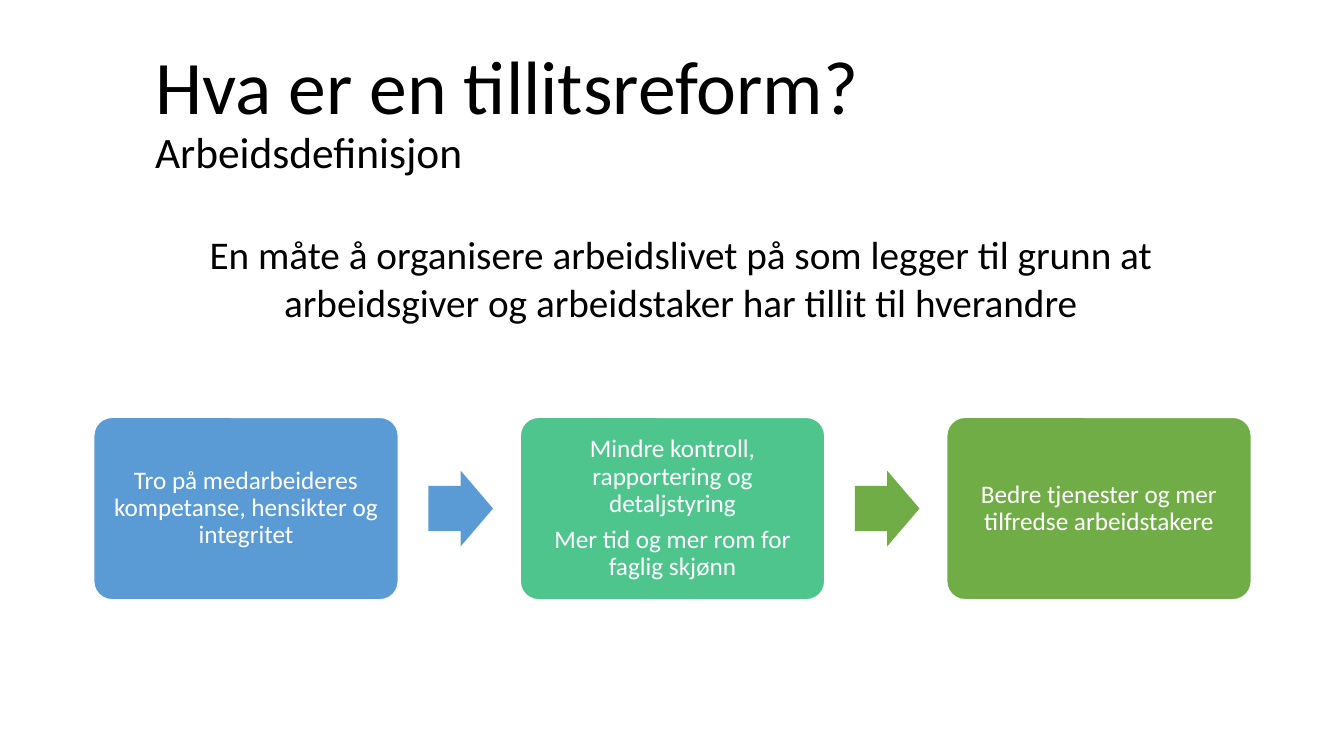
from dataclasses import dataclass
from typing import Any

import pptx
import pptx.dml.color
import pptx.enum.shapes
import pptx.enum.text
import pptx.util

Inches = pptx.util.Inches
Pt = pptx.util.Pt
RGBColor = pptx.dml.color.RGBColor
Shape = pptx.enum.shapes.MSO_SHAPE
Align = pptx.enum.text.PP_ALIGN
Anchor = pptx.enum.text.MSO_ANCHOR
AutoSize = pptx.enum.text.MSO_AUTO_SIZE

BLACK = RGBColor(0x00, 0x00, 0x00)
WHITE = RGBColor(0xFF, 0xFF, 0xFF)
BLUE = RGBColor(0x5B, 0x9B, 0xD5)
TEAL = RGBColor(0x4D, 0xC5, 0x8D)
GREEN = RGBColor(0x70, 0xAD, 0x47)

FONT = "Calibri"

# Flow geometry in inches
STEP_LEFT, STEP_TOP, STEP_WIDTH, STEP_HEIGHT = 0.93, 4.14, 3.02, 1.81
STEP_PITCH = 4.23
ARROW_OFFSET, ARROW_WIDTH, ARROW_HEIGHT = 3.32, 0.64, 0.75
ARROW_TOP = STEP_TOP + (STEP_HEIGHT - ARROW_HEIGHT) / 2

# Format values
STEP_FRAME = {
    "word_wrap": True,
    "vertical_anchor": Anchor.MIDDLE,
    "margin_left": Inches(0.07),
    "margin_right": Inches(0.07),
    "margin_top": Inches(0.07),
    "margin_bottom": Inches(0.07),
}
STEP_PARAGRAPH = {"alignment": Align.CENTER, "line_spacing": 0.9, "space_after": Pt(6.3)}
TITLE_FRAME = {"word_wrap": True, "vertical_anchor": Anchor.MIDDLE}
DEFINITION_FRAME = {"word_wrap": True, "auto_size": AutoSize.SHAPE_TO_FIT_TEXT}
DEFINITION_PARAGRAPH = {"alignment": Align.CENTER, "space_after": Pt(6)}


@dataclass(frozen=True)
class Step:
    """One box of the flow; arrow_color is that of the arrow leading to it."""
    paragraphs: tuple[str, ...]
    color: RGBColor
    arrow_color: RGBColor | None = None


STEPS = (
    Step(("Tro på medarbeideres kompetanse, hensikter og integritet",), BLUE),
    Step(("Mindre kontroll, rapportering og detaljstyring",
          "Mer tid og mer rom for faglig skjønn"), TEAL, BLUE),
    Step(("Bedre tjenester og mer tilfredse arbeidstakere",), GREEN, GREEN),
)


def apply_format(target: Any, values: dict[str, Any]) -> None:
    for attribute, value in values.items():
        setattr(target, attribute, value)


def add_run(paragraph: Any, text: str, size: float, color: RGBColor) -> None:
    run = paragraph.add_run()
    run.text = text
    apply_format(run.font, {"name": FONT, "size": Pt(size)})
    run.font.color.rgb = color


def add_filled_shape(slide: Any, kind: Any, box: tuple[float, ...],
                     color: RGBColor, adjustments: tuple[float, ...]) -> Any:
    shape = slide.shapes.add_shape(kind, *map(Inches, box))
    shape.shadow.inherit = False
    shape.fill.solid()
    shape.fill.fore_color.rgb = color
    for index, value in enumerate(adjustments):
        shape.adjustments[index] = value
    return shape


def add_title(slide: Any) -> None:
    title = slide.shapes.add_textbox(*map(Inches, (1.44, 0.4, 10.97, 1.45))).text_frame
    apply_format(title, TITLE_FRAME)
    heading = title.paragraphs[0]
    heading.line_spacing = 0.9
    add_run(heading, "Hva er en tillitsreform?", 54, BLACK)
    heading.add_line_break()
    add_run(heading, "Arbeidsdefinisjon", 31, BLACK)


def add_definition(slide: Any) -> None:
    definition = slide.shapes.add_textbox(*map(Inches, (1.44, 2.24, 10.62, 1.04))).text_frame
    apply_format(definition, DEFINITION_FRAME)
    sentence = definition.paragraphs[0]
    apply_format(sentence, DEFINITION_PARAGRAPH)
    add_run(sentence, "En måte å organisere arbeidslivet på som legger til grunn at "
                      "arbeidsgiver og arbeidstaker har tillit til hverandre", 28, BLACK)


def add_step(slide: Any, index: int, step: Step) -> None:
    left = STEP_LEFT + index * STEP_PITCH

    # Arrow from the previous box
    if step.arrow_color is not None:
        arrow_left = left - STEP_PITCH + ARROW_OFFSET
        arrow = add_filled_shape(slide, Shape.RIGHT_ARROW,
                                 (arrow_left, ARROW_TOP, ARROW_WIDTH, ARROW_HEIGHT),
                                 step.arrow_color, (0.6, 0.5))
        arrow.line.fill.background()

    # Box with its text
    card = add_filled_shape(slide, Shape.ROUNDED_RECTANGLE,
                            (left, STEP_TOP, STEP_WIDTH, STEP_HEIGHT), step.color, (0.1,))
    card.line.color.rgb = WHITE
    card.line.width = Pt(1)
    frame = card.text_frame
    apply_format(frame, STEP_FRAME)
    for number, text in enumerate(step.paragraphs):
        paragraph = frame.add_paragraph() if number else frame.paragraphs[0]
        apply_format(paragraph, STEP_PARAGRAPH)
        add_run(paragraph, text, 18, WHITE)


def main() -> None:
    presentation = pptx.Presentation()
    apply_format(presentation, {"slide_width": Inches(13.33), "slide_height": Inches(7.5)})
    slide = presentation.slides.add_slide(presentation.slide_layouts[6])
    add_title(slide)
    add_definition(slide)
    for index, step in enumerate(STEPS):
        add_step(slide, index, step)
    presentation.save("out.pptx")


if __name__ == "__main__":
    main()
